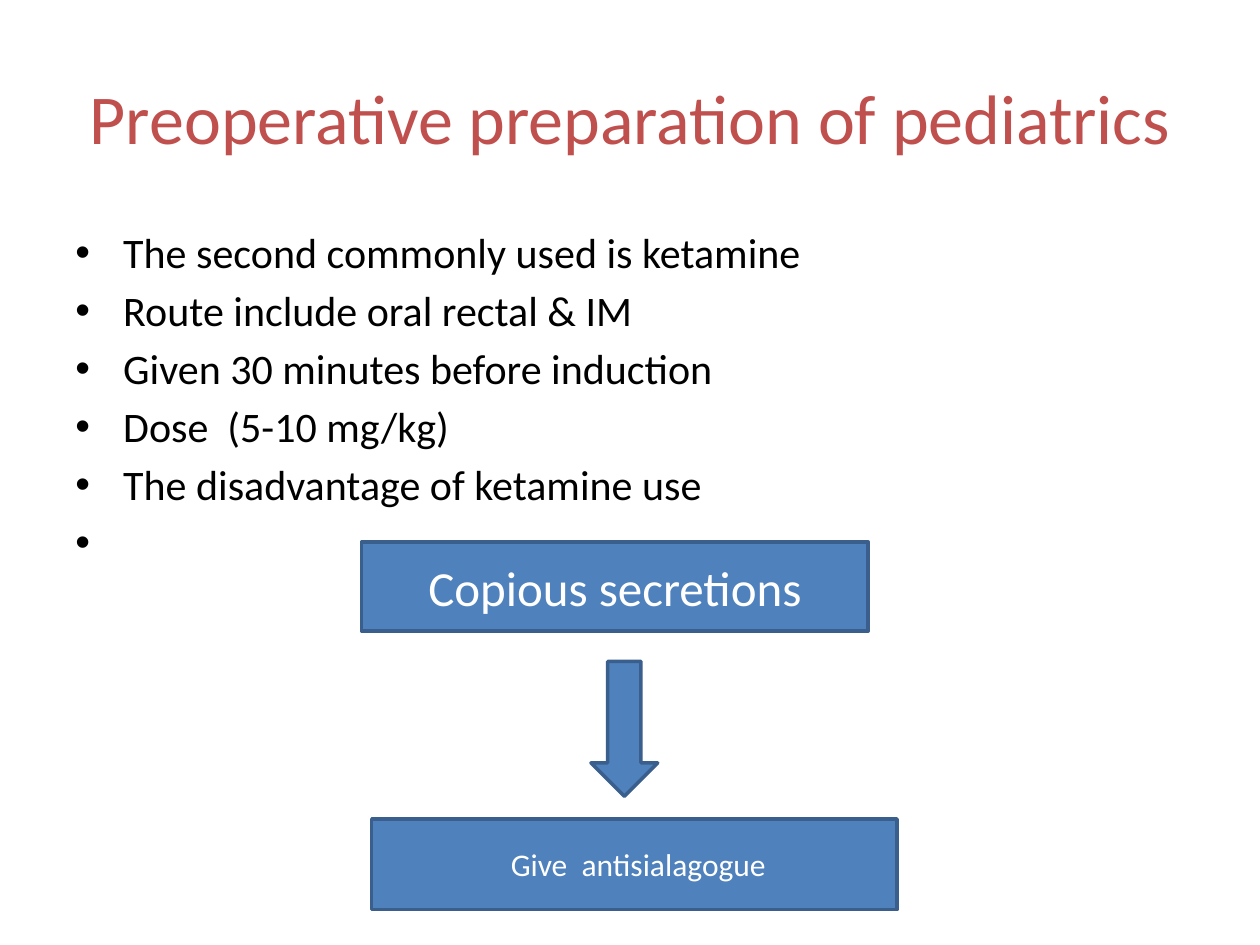
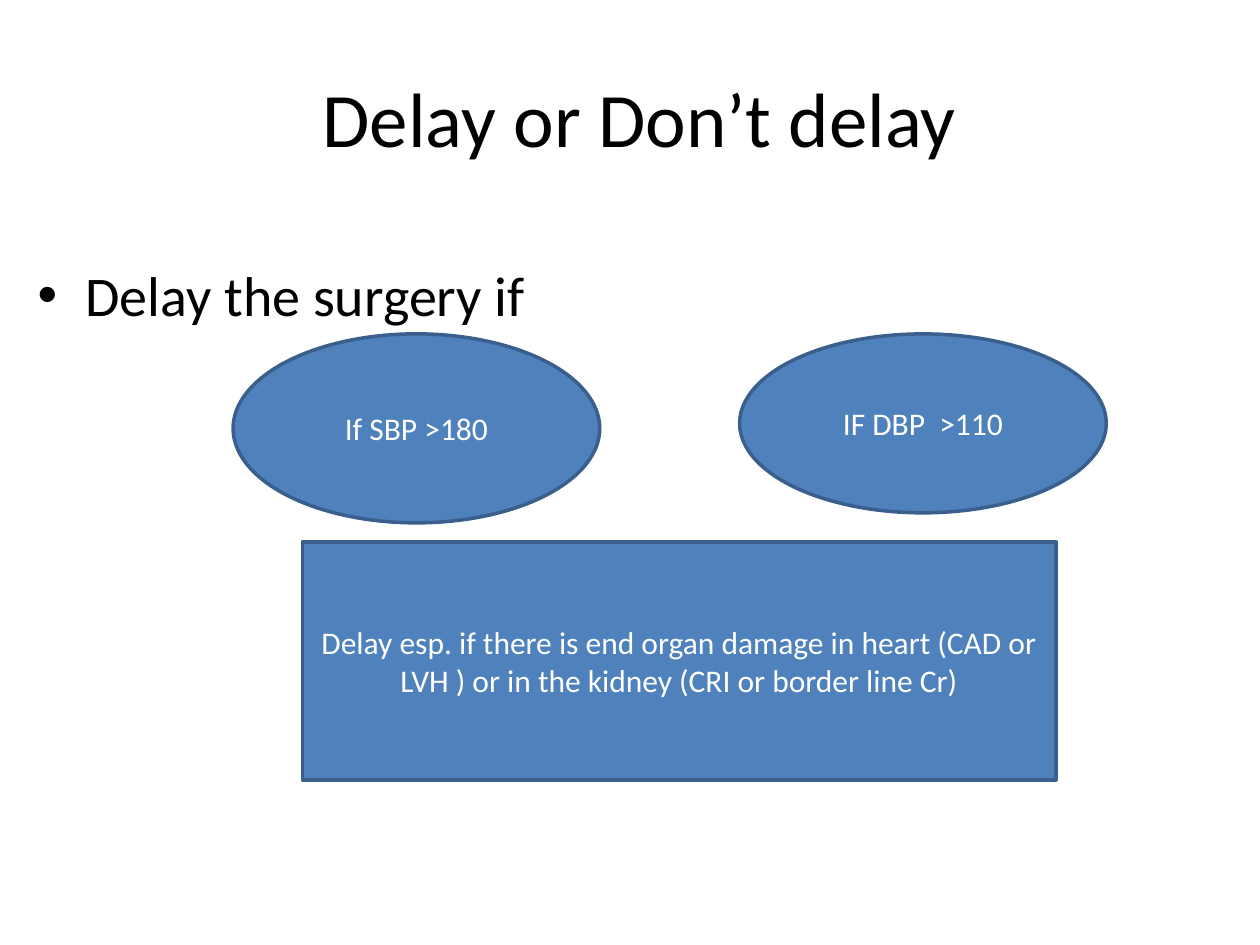
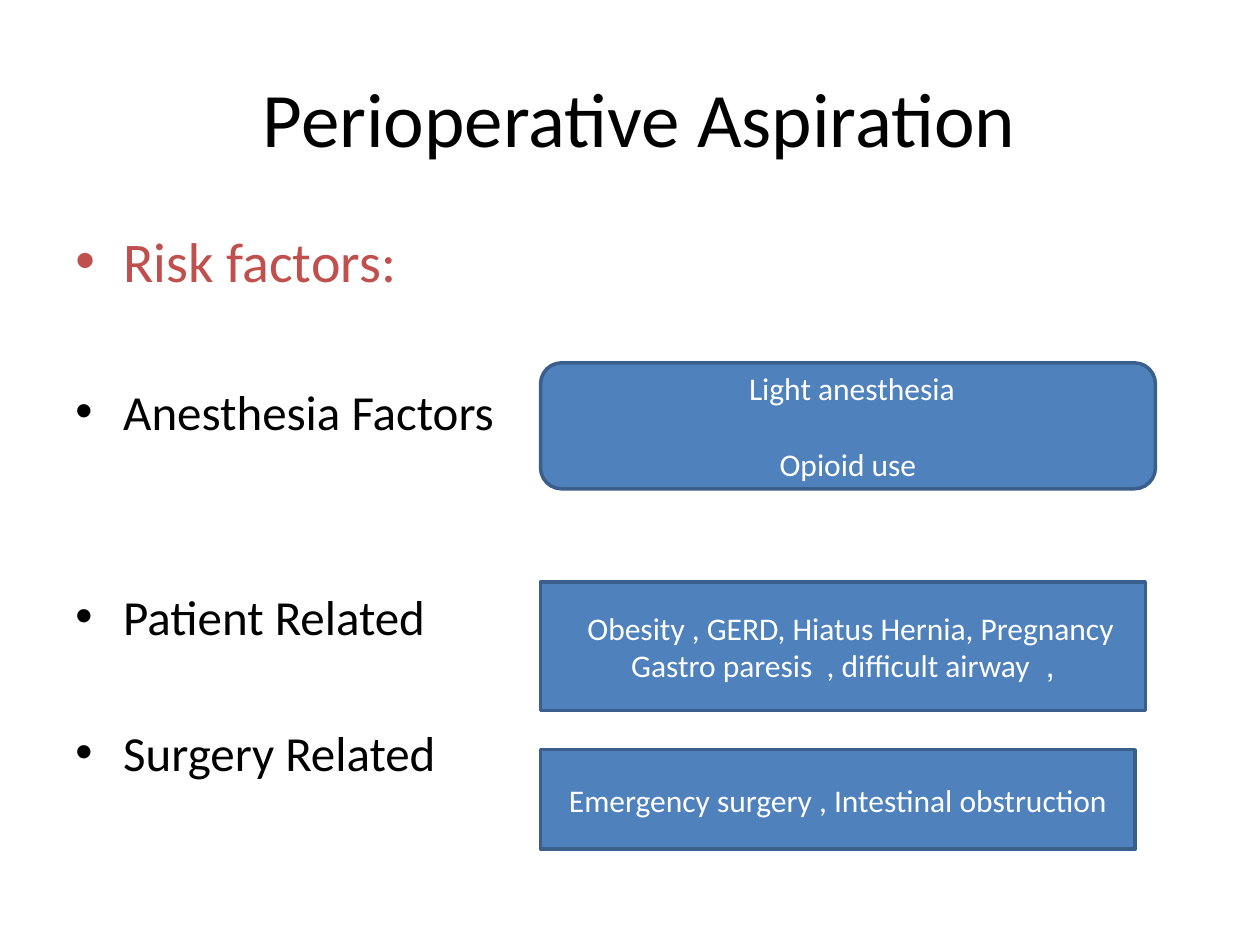
from pptx import Presentation
from pptx.dml.color import RGBColor
from pptx.enum.shapes import MSO_SHAPE
from pptx.enum.text import MSO_ANCHOR, PP_ALIGN
from pptx.oxml import parse_xml
from pptx.oxml.ns import nsdecls
from pptx.util import Inches, Pt

RECTANGLE = MSO_SHAPE.RECTANGLE
ROUNDED = MSO_SHAPE.ROUNDED_RECTANGLE
OVAL = MSO_SHAPE.OVAL
DOWN_ARROW = MSO_SHAPE.DOWN_ARROW
MIDDLE = MSO_ANCHOR.MIDDLE
TOP = MSO_ANCHOR.TOP
CENTER = PP_ALIGN.CENTER

BLACK = RGBColor(0x00, 0x00, 0x00)
WHITE = RGBColor(0xFF, 0xFF, 0xFF)
RED = RGBColor(0xC0, 0x50, 0x4D)
BLUE = RGBColor(0x4F, 0x81, 0xBD)
DARK_BLUE = RGBColor(0x3A, 0x5F, 0x8C)

FONT = "Calibri"
BLANK_LAYOUT = 6
BULLET_INDENT = Inches(0.38)
SPACE_RATIO = 0.18  # space before a paragraph, per point of text size
LINE_RATIO = 1.4  # line height with its space, per point of text size


def set_attributes(target, values):
    for name, value in values.items():
        setattr(target, name, value)


class Deck:
    """Holds the shared style and the slide being filled."""

    def __init__(self):
        self.presentation = Presentation()
        self.presentation.slide_width = Inches(10)
        self.presentation.slide_height = Inches(7.5)
        self.slide = None

    def new_slide(self, title, size=44, color=BLACK):
        layout = self.presentation.slide_layouts[BLANK_LAYOUT]
        self.slide = self.presentation.slides.add_slide(layout)
        frame = self.text_frame((0.5, 0.3, 9, 1.25), MIDDLE)
        self.add_centered_text(frame.paragraphs[0], title, size, color)

    def text_frame(self, box, anchor):
        text_box = self.slide.shapes.add_textbox(*map(Inches, box))
        frame = text_box.text_frame
        set_attributes(frame, {"word_wrap": True, "vertical_anchor": anchor})
        return frame

    def add_text(self, paragraph, text, size, color):
        run = paragraph.add_run()
        run.text = text
        set_attributes(run.font, {"name": FONT, "size": Pt(size)})
        run.font.color.rgb = color

    def add_centered_text(self, paragraph, text, size, color):
        """Add a centred line that reads from right to left."""
        paragraph.alignment = CENTER
        paragraph._p.get_or_add_pPr().set("rtl", "1")
        self.add_text(paragraph, text, size, color)

    def bullets(self, left, top, items):
        """Each item is text, size, colour and the size of every line skipped before it."""
        frame = self.text_frame((left, top, 9, 4.95), TOP)
        for index, (text, size, color, skipped) in enumerate(items):
            paragraph = frame.add_paragraph() if index else frame.paragraphs[0]
            gap = SPACE_RATIO * size + LINE_RATIO * sum(skipped) if index else 0
            paragraph.space_before = Pt(gap)
            properties = paragraph._p.get_or_add_pPr()
            properties.set("marL", str(BULLET_INDENT))
            properties.set("indent", str(-BULLET_INDENT))
            for tag in ('buFont %s typeface="Arial"', 'buChar %s char="•"'):
                properties.append(parse_xml(f"<a:{tag % nsdecls('a')}/>"))
            self.add_text(paragraph, text, size, color)

    def block(self, kind, box, lines=(), size=18, gap=0):
        shape = self.slide.shapes.add_shape(kind, *map(Inches, box))
        shape.shadow.inherit = False
        shape.fill.solid()
        shape.fill.fore_color.rgb = BLUE
        shape.line.color.rgb = DARK_BLUE
        shape.line.width = Pt(2)
        frame = shape.text_frame
        set_attributes(frame, {"word_wrap": True, "vertical_anchor": MIDDLE})
        for index, line in enumerate(lines):
            paragraph = frame.add_paragraph() if index else frame.paragraphs[0]
            paragraph.space_before = Pt(gap if index else 0)
            self.add_centered_text(paragraph, line, size, WHITE)


def add_ketamine_slide(deck):
    deck.new_slide("Preoperative preparation of pediatrics", 40, RED)
    points = (
        "The second commonly used is ketamine",
        "Route include oral rectal & IM",
        "Given 30 minutes before induction",
        "Dose  (5-10 mg/kg)",
        "The disadvantage of ketamine use",
        " ",
    )
    deck.bullets(0.5, 1.75, [(point, 24, BLACK, ()) for point in points])
    deck.block(RECTANGLE, (2.87, 4.3, 4.02, 0.71), ["Copious secretions"], 28)
    deck.block(DOWN_ARROW, (4.69, 5.25, 0.53, 1.07))
    deck.block(RECTANGLE, (2.95, 6.5, 4.17, 0.72), ["Give  antisialagogue "])


def add_delay_slide(deck):
    deck.new_slide("Delay or Don’t delay ")
    deck.bullets(0.2, 2.02, [("Delay the surgery if", 32, BLACK, ())])
    deck.block(OVAL, (1.85, 2.65, 2.91, 1.5), ["If SBP >180"])
    deck.block(OVAL, (5.87, 2.65, 2.91, 1.42), ["IF DBP  >110"])
    deck.block(RECTANGLE, (2.4, 4.3, 5.98, 1.89), [
        "Delay esp. if there is end organ damage in heart (CAD or LVH ) "
        "or in the kidney (CRI or border line Cr)"])


def add_aspiration_slide(deck):
    deck.new_slide("Perioperative Aspiration ")
    deck.bullets(0.5, 1.75, [
        ("Risk factors:", 32, RED, ()),
        ("Anesthesia Factors", 28, BLACK, (32,)),
        ("Patient Related", 28, BLACK, (28, 28)),
        ("Surgery Related", 28, BLACK, (28,)),
    ])
    left = 4.29
    deck.block(ROUNDED, (left, 2.88, 4.88, 1),
               ["Light anesthesia ", "Opioid use"], gap=22)
    deck.block(RECTANGLE, (left, 4.62, 4.8, 1.02),
               ["Obesity , GERD, Hiatus Hernia, Pregnancy  ",
                ",  Gastro paresis  , difficult airway"])
    deck.block(RECTANGLE, (left, 5.95, 4.72, 0.79),
               ["Emergency surgery , Intestinal obstruction"])


def main():
    deck = Deck()
    add_ketamine_slide(deck)
    add_delay_slide(deck)
    add_aspiration_slide(deck)
    deck.presentation.save("out.pptx")


if __name__ == "__main__":
    main()
